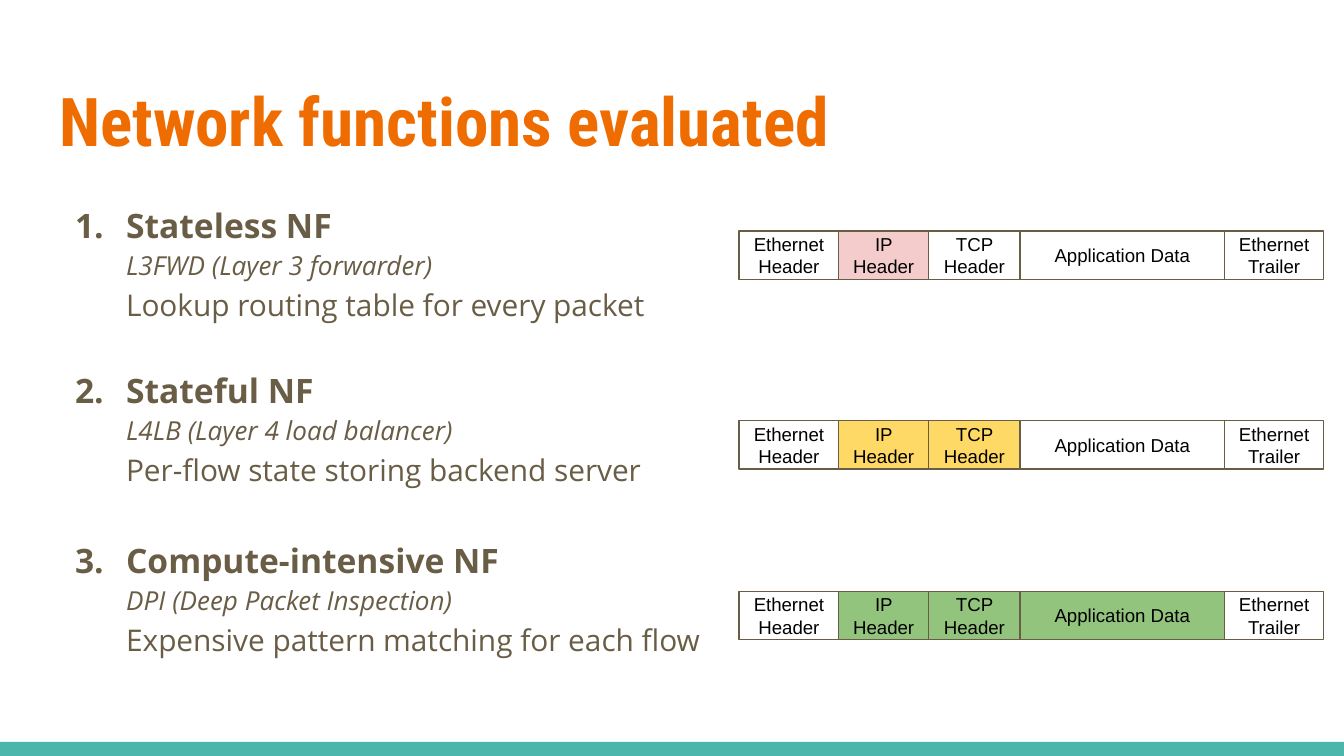
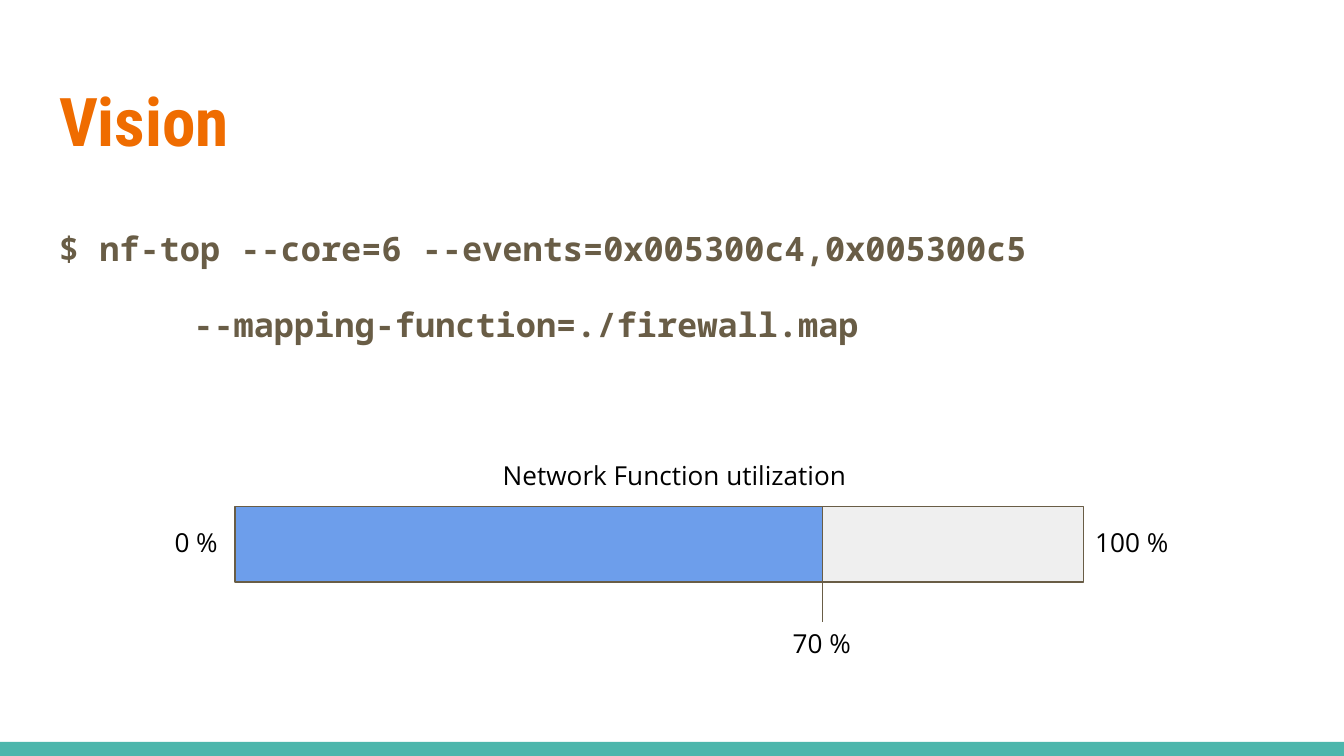
from copy import deepcopy

from lxml import etree
from pptx import Presentation
from pptx.dml.color import RGBColor
from pptx.enum.shapes import MSO_CONNECTOR, MSO_SHAPE
from pptx.enum.text import MSO_ANCHOR, MSO_AUTO_SIZE, PP_ALIGN
from pptx.oxml.ns import qn
from pptx.util import Inches, Pt

RECT, STRAIGHT = MSO_SHAPE.RECTANGLE, MSO_CONNECTOR.STRAIGHT
TOP, MIDDLE = MSO_ANCHOR.TOP, MSO_ANCHOR.MIDDLE
LEFT, CENTER = PP_ALIGN.LEFT, PP_ALIGN.CENTER
NO_AUTOFIT = MSO_AUTO_SIZE.NONE
TITLE_ONLY = 5
BODY_SPACING = 1.15

COLORS = {
    "title": "EF6C00", "body": "695D46", "black": "000000", "band": "4DB6AC",
    "pink": "F4CCCC", "yellow": "FFD966", "green": "93C47D",
    "blue": "6D9EEB", "gray": "EFEFEF",
}
FORMATS = {
    "title": dict(name="Roboto Condensed", size=Pt(36), bold=True, color="title"),
    "heading": dict(name="Open Sans", size=Pt(18), bold=True, color="body"),
    "example": dict(name="Open Sans", size=Pt(14), italic=True, color="body"),
    "detail": dict(name="Open Sans", size=Pt(16), color="body"),
    "code": dict(name="Noto Sans Mono", size=Pt(18), bold=True, color="body"),
    "label": dict(name="Open Sans", size=Pt(14), color="black"),
    "field": dict(name="Arial", size=Pt(10), color="black"),
}

PACKET_LEFT, PACKET_HEIGHT = 5.5, 0.36
PACKET_FIELDS = [("Ethernet Header", 0.74), ("IP Header", 0.67), ("TCP Header", 0.68),
                 ("Application Data", 1.52), ("Ethernet Trailer", 0.74)]

# space before, heading, example, detail, packet top, colour, coloured fields
FUNCTIONS = [
    (0, "Stateless NF", "L3FWD (Layer 3 forwarder)",
     "Lookup routing table for every packet",
     1.72, "pink", {"IP Header"}),
    (22, "Stateful NF", "L4LB (Layer 4 load balancer)",
     "Per-flow state storing backend server",
     3.13, "yellow", {"IP Header", "TCP Header"}),
    (25, "Compute-intensive NF", "DPI (Deep Packet Inspection)",
     "Expensive pattern matching for each flow",
     4.4, "green", {"IP Header", "TCP Header", "Application Data"}),
]


def rgb(name):
    return RGBColor.from_string(COLORS[name])


class Deck:
    def __init__(self):
        self.prs = Presentation()
        self.prs.slide_width = Inches(10)
        self.prs.slide_height = Inches(10 * 9 / 16)
        self.slide = None

    def new_slide(self, title):
        self.slide = self.prs.slides.add_slide(self.prs.slide_layouts[TITLE_ONLY])
        sp = self.slide.shapes.title
        box = dict(left=0.34, top=0.49, width=9.32, height=0.77)
        for attr, value in box.items():
            setattr(sp, attr, Inches(value))
        p = self.frame(sp, TOP).paragraphs[0]
        p.alignment = LEFT
        self.run(p, title, "title")
        self.rect(0, 5.52, 10, 0.11, "band", line=None)

    def frame(self, sp, anchor):
        """Give a shape's text frame the shared margins and wrapping."""
        tf = sp.text_frame
        values = dict(word_wrap=True, auto_size=NO_AUTOFIT, vertical_anchor=anchor)
        values.update({f"margin_{side}": Inches(0.1)
                       for side in ("left", "top", "right", "bottom")})
        for attr, value in values.items():
            setattr(tf, attr, value)
        return tf

    def run(self, p, text, style):
        r = p.add_run()
        r.text = text
        for attr, value in FORMATS[style].items():
            if attr == "color":
                r.font.color.rgb = rgb(value)
            else:
                setattr(r.font, attr, value)
        return r

    def textbox(self, left, top, width, height):
        sp = self.slide.shapes.add_textbox(*map(Inches, (left, top, width, height)))
        return self.frame(sp, TOP)

    def body_paragraph(self, tf, first, space_before):
        p = tf.paragraphs[0] if first else tf.add_paragraph()
        p.line_spacing = BODY_SPACING
        p.space_before = Pt(space_before)
        return p

    def label(self, left, top, width, text, align=LEFT):
        p = self.textbox(left, top, width, 0.45).paragraphs[0]
        p.alignment = align
        self.run(p, text, "label")

    def rect(self, left, top, width, height, fill=None, text=None, line="body"):
        sp = self.slide.shapes.add_shape(
            RECT, *map(Inches, (left, top, width, height)))
        sp.shadow.inherit = False
        if fill:
            sp.fill.solid()
            sp.fill.fore_color.rgb = rgb(fill)
        else:
            sp.fill.background()
        if line:
            sp.line.color.rgb = rgb(line)
            sp.line.width = Pt(0.75)
        else:
            sp.line.fill.background()
        if text:
            p = self.frame(sp, MIDDLE).paragraphs[0]
            p.alignment = CENTER
            self.run(p, text, "field")

    def line(self, x1, y1, x2, y2):
        cn = self.slide.shapes.add_connector(STRAIGHT, *map(Inches, (x1, y1, x2, y2)))
        cn.line.color.rgb = rgb("body")
        cn.line.width = Pt(0.75)
        etree.SubElement(cn._element.spPr, qn("a:effectLst"))

    def numbered(self, p, lines):
        """Fill one numbered paragraph with (text, style) lines."""
        pPr = p._p.get_or_add_pPr()
        pPr.set("marL", str(Inches(0.5)))
        pPr.set("indent", str(Inches(-0.38)))
        color = etree.SubElement(pPr, qn("a:buClr"))
        etree.SubElement(color, qn("a:srgbClr"), val=COLORS["body"])
        etree.SubElement(pPr, qn("a:buAutoNum"), type="arabicPeriod")
        for i, (text, style) in enumerate(lines):
            if i:
                p.add_line_break()
                # The break takes the size of the line it ends
                p._p[-1].append(deepcopy(r._r.rPr))
            r = self.run(p, text, style)

    def packet(self, top, color, highlighted):
        left = PACKET_LEFT
        for name, width in PACKET_FIELDS:
            fill = color if name in highlighted else None
            self.rect(left, top, width, PACKET_HEIGHT, fill, name)
            left += width


def functions_slide(deck):
    deck.new_slide("Network functions evaluated")
    tf = deck.textbox(0.34, 1.38, 5.16, 3.73)
    for i, (space, heading, example, detail, top, color, fields) in enumerate(FUNCTIONS):
        p = deck.body_paragraph(tf, i == 0, space)
        deck.numbered(p, [(heading, "heading"), (example, "example"),
                          (detail, "detail")])
        deck.packet(top, color, fields)


def vision_slide(deck):
    deck.new_slide("Vision")
    tf = deck.textbox(0.34, 1.55, 9.32, 1.26)
    p = deck.body_paragraph(tf, True, 0)
    deck.run(p, "$ nf-top --core=6 --events=0x005300c4,0x005300c5", "code")
    p = deck.body_paragraph(tf, False, 16)
    p._p.get_or_add_pPr().set("marL", str(Inches(1)))
    deck.run(p, "--mapping-function=./firewall.map", "code")

    left, top, total, used, height = 1.75, 3.77, 6.31, 4.37, 0.56
    mark = left + used
    deck.rect(left, top, total, height, "gray")
    deck.rect(left, top, used, height, "blue")
    deck.label(left - 0.55, 3.82, 0.55, "0 %")
    deck.label(8.05, 3.82, 0.75, "100 %")
    deck.label(3.05, 3.32, 3.94, "Network Function utilization", CENTER)
    deck.label(mark - 0.32, 4.57, 0.75, "70 %")
    deck.line(mark, top + height, mark, 4.63)


def main():
    deck = Deck()
    functions_slide(deck)
    vision_slide(deck)
    deck.prs.save("out.pptx")


if __name__ == "__main__":
    main()
